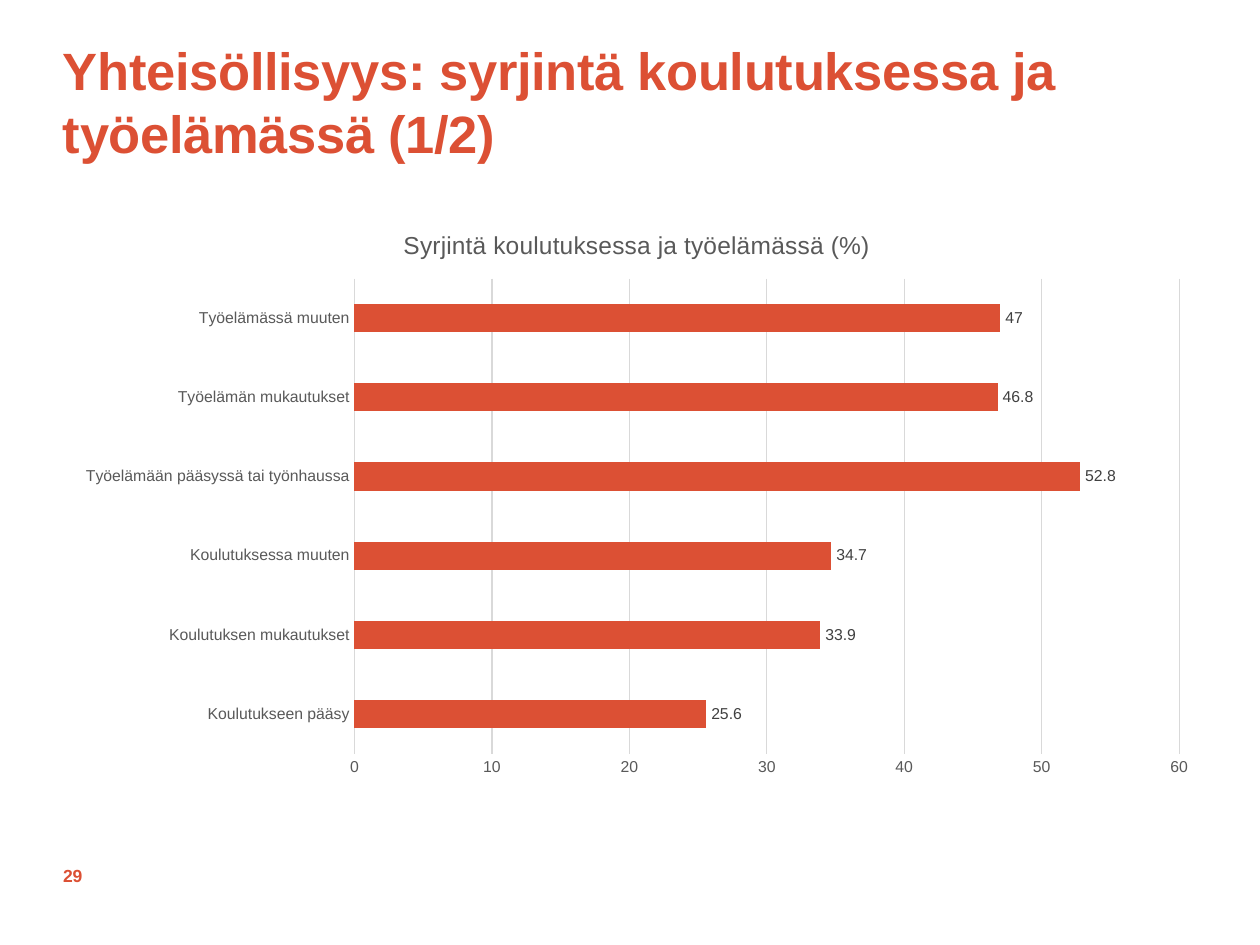
import pptx
import pptx.chart.data
import pptx.dml.color
import pptx.enum.chart
import pptx.enum.text
import pptx.util

Pt = pptx.util.Pt
RGBColor = pptx.dml.color.RGBColor

ORANGE = RGBColor(0xDC, 0x50, 0x34)
GREY = RGBColor(0x59, 0x59, 0x59)
DARK = RGBColor(0x40, 0x40, 0x40)
GRID = RGBColor(0xD9, 0xD9, 0xD9)
FONT = "Arial"

DISCRIMINATION = {
    "Koulutukseen pääsy": 25.6,
    "Koulutuksen mukautukset": 33.9,
    "Koulutuksessa muuten": 34.7,
    "Työelämään pääsyssä tai työnhaussa": 52.8,
    "Työelämän mukautukset": 46.8,
    "Työelämässä muuten": 47,
}


class Deck:
    def __init__(self, width, height):
        self.prs = pptx.Presentation()
        self.prs.slide_width, self.prs.slide_height = Pt(width), Pt(height)
        self.s = self.prs.slides.add_slide(self.prs.slide_layouts[6])

    def style(self, font, size, color, bold=False):
        font.name, font.size, font.bold = FONT, Pt(size), bold
        font.color.rgb = color

    def text(self, text, x, y, w, h, size, anchor, line=None, spc=None):
        tf = self.s.shapes.add_textbox(Pt(x), Pt(y), Pt(w), Pt(h)).text_frame
        tf.word_wrap = True
        tf.vertical_anchor = anchor
        tf.margin_left = tf.margin_right = tf.margin_top = tf.margin_bottom = 0
        p = tf.paragraphs[0]
        r = p.add_run()
        r.text = text
        self.style(p.font, size, ORANGE, bold=True)
        if line:
            p.line_spacing = Pt(line)
        if spc:
            r.font._element.set("spc", str(round(spc * 100)))

    def line(self, fmt):
        fmt.line.color.rgb = GRID
        fmt.line.width = Pt(0.75)

    def axis(self, axis):
        axis.major_tick_mark = pptx.enum.chart.XL_TICK_MARK.NONE
        axis.minor_tick_mark = pptx.enum.chart.XL_TICK_MARK.NONE
        self.style(axis.tick_labels.font, 9, GREY)

    def bar_chart(self, title, values, x, y, w, h, top, step):
        data = pptx.chart.data.CategoryChartData()
        data.categories = list(values)
        data.add_series("Series 1", list(values.values()))
        chart = self.s.shapes.add_chart(
            pptx.enum.chart.XL_CHART_TYPE.BAR_CLUSTERED,
            Pt(x), Pt(y), Pt(w), Pt(h), data).chart
        chart.font.name, chart.font.size = FONT, Pt(10)
        chart.has_legend = False

        # Chart title
        chart.has_title = True
        p = chart.chart_title.text_frame.paragraphs[0]
        p.add_run().text = title
        self.style(p.font, 14, GREY)

        # Axes and gridlines
        cat, val = chart.category_axis, chart.value_axis
        self.axis(cat)
        self.axis(val)
        self.line(cat.format)
        val.format.line.fill.background()
        val.minimum_scale, val.maximum_scale, val.major_unit = 0, top, step
        val.has_major_gridlines = True
        self.line(val.major_gridlines.format)

        # Bars and value labels
        plot = chart.plots[0]
        plot.gap_width = 182
        plot.vary_by_categories = False
        series = plot.series[0]
        series.format.fill.solid()
        series.format.fill.fore_color.rgb = ORANGE
        labels = series.data_labels
        labels.show_value = True
        labels.position = pptx.enum.chart.XL_LABEL_POSITION.OUTSIDE_END
        self.style(labels.font, 9, DARK)


def main():
    deck = Deck(720, 540)
    anchor = pptx.enum.text.MSO_ANCHOR

    # Title
    deck.text("Yhteisöllisyys: syrjintä koulutuksessa ja työelämässä (1/2)",
              36, 21.6, 648, 83.5, 30, anchor.TOP, line=36, spc=-0.2)

    # Chart
    deck.bar_chart("Syrjintä koulutuksessa ja työelämässä (%)", DISCRIMINATION,
                   36, 118, 656, 332.6, top=60, step=10)

    # Page number
    deck.text("29", 36, 486, 51, 28.8, 10, anchor.MIDDLE)

    deck.prs.save("out.pptx")


if __name__ == "__main__":
    main()
